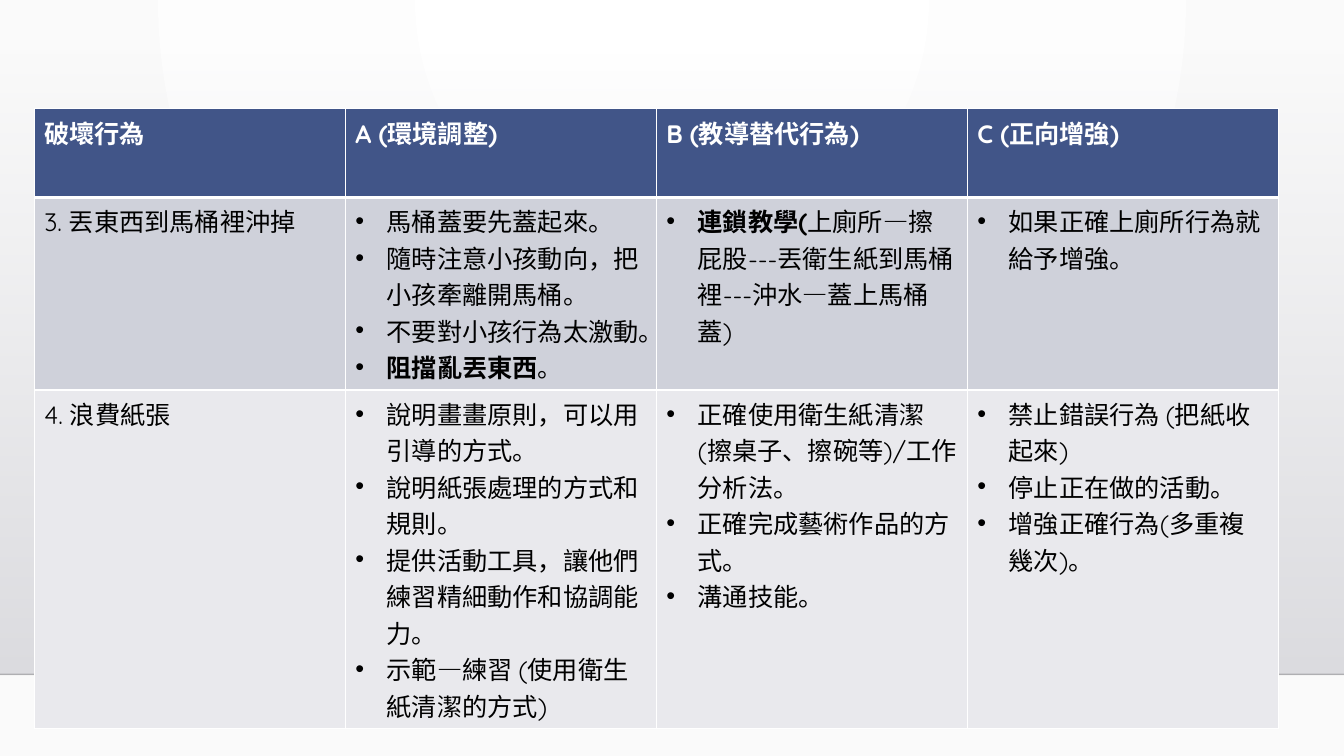
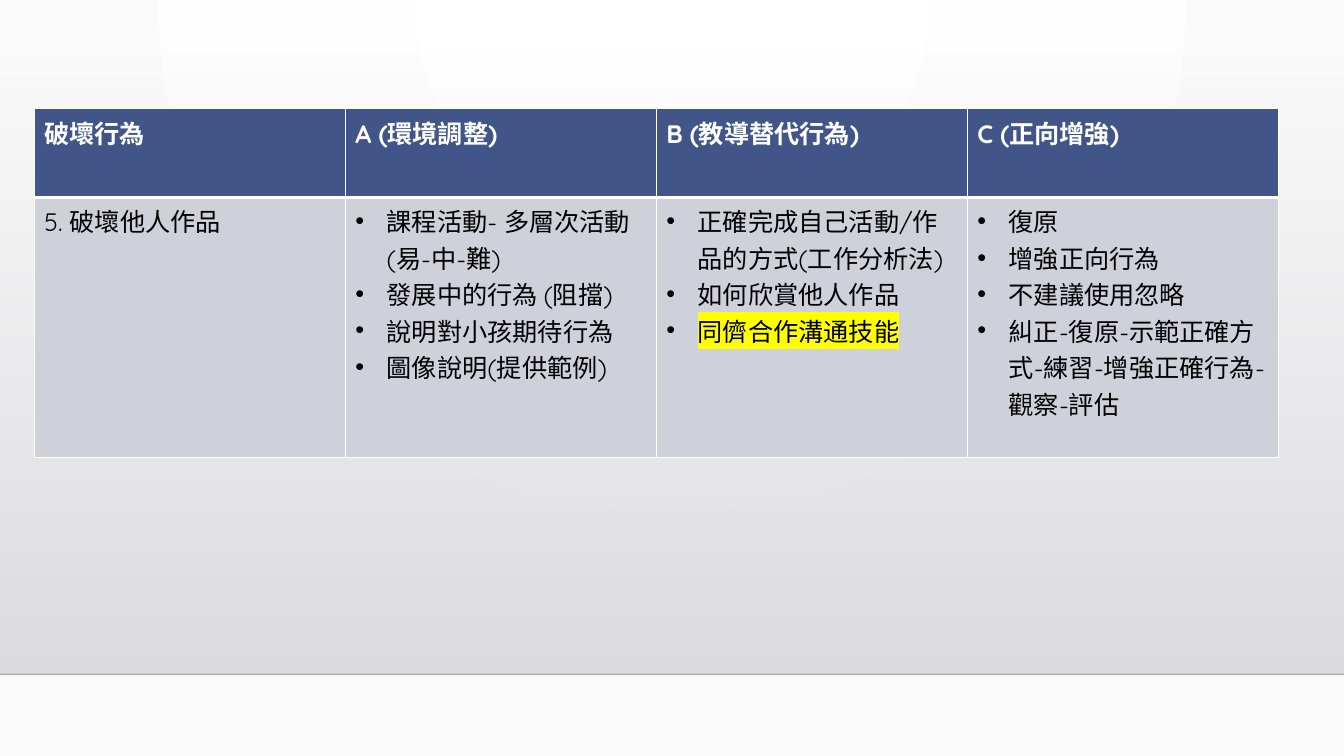
from dataclasses import dataclass

from lxml import etree
from pptx import Presentation
from pptx.dml.color import RGBColor
from pptx.enum.shapes import MSO_CONNECTOR, MSO_SHAPE
from pptx.oxml import parse_xml
from pptx.oxml.ns import nsdecls, qn
from pptx.util import Inches, Pt

STRAIGHT = MSO_CONNECTOR.STRAIGHT
RECTANGLE = MSO_SHAPE.RECTANGLE


@dataclass(frozen=True)
class Theme:
    font: str = "Quicksand"
    size: int = 18
    white: str = "FFFFFF"
    page_edge: str = "FAFAFA"
    band_top: str = "DCDCE0"
    band_bottom: str = "DEDEE2"
    floor_line: str = "000001"
    header_fill: str = "415588"
    row_fills: tuple = ("CFD1DA", "E9E9ED")
    text: str = "000000"
    highlight: str = "FFFF00"
    thin: int = 1
    thick: int = 3


THEME = Theme()
BLANK_LAYOUT = 6
SLIDE_WIDTH, SLIDE_HEIGHT = 13.33, 7.5
BAND_TOP, BAND_BOTTOM = 0.51, 6.69
TABLE_LEFT, TABLE_TOP, TABLE_WIDTH = 0.34, 1.08, 12.34
HEADER_HEIGHT = 0.88
BULLET_INDENT = 0.31

HEADERS = ["破壞行為", "A (環境調整)", "B (教導替代行為)", "C (正向增強)"]

# A row is its height, its behaviour, and a bullet list for each other column.
# A bullet is a string, or a list of (text, style) runs.
SLIDES = [
    [
        (1.91, "3. 丟東西到馬桶裡沖掉",
         ["馬桶蓋要先蓋起來。",
          "隨時注意小孩動向，把小孩牽離開馬桶。",
          "不要對小孩行為太激動。",
          [("阻擋亂丟東西", "bold"), ("。", "plain")]],
         [[("連鎖教學(", "bold"),
           ("上廁所—擦屁股---丟衛生紙到馬桶裡---沖水—蓋上馬桶蓋)", "plain")]],
         ["如果正確上廁所行為就給予增強。"]),
        (3.35, "4. 浪費紙張",
         ["說明畫畫原則，可以用引導的方式。",
          "說明紙張處理的方式和規則。",
          "提供活動工具，讓他們練習精細動作和協調能力。",
          "示範—練習 (使用衛生紙清潔的方式)"],
         ["正確使用衛生紙清潔(擦桌子、擦碗等)/工作分析法。",
          "正確完成藝術作品的方式。",
          "溝通技能。"],
         ["禁止錯誤行為 (把紙收起來)",
          "停止正在做的活動。",
          "增強正確行為(多重複幾次)。"]),
    ],
    [
        (2.58, "5. 破壞他人作品",
         ["課程活動- 多層次活動(易-中-難)",
          "發展中的行為 (阻擋)",
          "說明對小孩期待行為",
          "圖像說明(提供範例)"],
         ["正確完成自己活動/作品的方式(工作分析法)",
          "如何欣賞他人作品",
          [("同儕合作溝通技能", "highlight")]],
         ["復原",
          "增強正向行為",
          "不建議使用忽略",
          "糾正-復原-示範正確方式-練習-增強正確行為-觀察-評估"]),
    ],
]


def color(value):
    return RGBColor.from_string(value)


def set_gradient(fill, colors):
    fill.gradient()
    for stop, value in zip(fill.gradient_stops, colors):
        stop.color.rgb = color(value)


def set_opacity(color_element, percent):
    etree.SubElement(color_element, qn("a:alpha"), val=str(percent * 1000))


def set_page_background(master):
    """Give every slide a radial gradient centred on the top edge."""
    set_gradient(master.background.fill, (THEME.white, THEME.page_edge))
    gradient = master.element.find(".//" + qn("a:gradFill"))
    gradient.replace(gradient.find(qn("a:lin")), parse_xml(
        f'<a:path {nsdecls("a")} path="circle">'
        '<a:fillToRect l="43000" t="0" r="43000" b="100000"/></a:path>'))


def add_floor(slide):
    """Draw the band that fades in downwards, and the line below it."""
    band = slide.shapes.add_shape(
        RECTANGLE, 0, Inches(BAND_TOP),
        Inches(SLIDE_WIDTH), Inches(BAND_BOTTOM - BAND_TOP))
    band.shadow.inherit = False
    band.line.fill.background()
    set_gradient(band.fill, (THEME.band_top, THEME.band_bottom))
    band.fill.gradient_angle = 270
    set_opacity(band.element.spPr.find(".//" + qn("a:srgbClr")), 0)

    line = slide.shapes.add_connector(
        STRAIGHT, 0, Inches(BAND_BOTTOM),
        Inches(SLIDE_WIDTH), Inches(BAND_BOTTOM))
    line.line.width = Pt(1)
    line.line.color.rgb = color(THEME.floor_line)
    properties = line.element.spPr
    set_opacity(properties.find(".//" + qn("a:srgbClr")), 20)
    etree.SubElement(properties, qn("a:effectLst"))


def set_borders(cell, top, bottom):
    properties = cell._tc.get_or_add_tcPr()
    widths = {"L": THEME.thin, "R": THEME.thin, "T": top, "B": bottom}
    for side, width in widths.items():
        properties.append(parse_xml(
            f'<a:ln{side} {nsdecls("a")} w="{Pt(width)}"><a:solidFill>'
            f'<a:srgbClr val="{THEME.white}"/></a:solidFill></a:ln{side}>'))


def add_bullet(paragraph):
    properties = paragraph._p.get_or_add_pPr()
    indent = Inches(BULLET_INDENT)
    properties.set("marL", str(indent))
    properties.set("indent", str(-indent))
    etree.SubElement(properties, qn("a:buFont"), typeface="Arial")
    etree.SubElement(properties, qn("a:buChar"), char="•")


def add_run(paragraph, text, style, text_color):
    run = paragraph.add_run()
    run.text = text
    formats = {"name": THEME.font, "size": Pt(THEME.size),
               "bold": style == "bold"}
    for name, value in formats.items():
        setattr(run.font, name, value)
    run.font.color.rgb = color(text_color)
    if style == "highlight":
        fill = run._r.get_or_add_rPr().find(qn("a:solidFill"))
        fill.addnext(parse_xml(
            f'<a:highlight {nsdecls("a")}>'
            f'<a:srgbClr val="{THEME.highlight}"/></a:highlight>'))


def fill_cell(cell, content, fill, text_color, style="plain"):
    """Write a string as plain text, or a list as bullets."""
    cell.fill.solid()
    cell.fill.fore_color.rgb = color(fill)
    bulleted = isinstance(content, list)
    frame = cell.text_frame
    for index, item in enumerate(content if bulleted else [content]):
        paragraph = frame.add_paragraph() if index else frame.paragraphs[0]
        if bulleted:
            add_bullet(paragraph)
        runs = [(item, style)] if isinstance(item, str) else item
        for text, run_style in runs:
            add_run(paragraph, text, run_style, text_color)


def add_behaviour_table(slide, behaviours):
    heights = [HEADER_HEIGHT] + [height for height, *_ in behaviours]
    table = slide.shapes.add_table(
        len(heights), len(HEADERS), Inches(TABLE_LEFT), Inches(TABLE_TOP),
        Inches(TABLE_WIDTH), Inches(sum(heights))).table
    for row, height in zip(table.rows, heights):
        row.height = Inches(height)

    for column, header in enumerate(HEADERS):
        cell = table.cell(0, column)
        set_borders(cell, THEME.thin, THEME.thick)
        fill_cell(cell, header, THEME.header_fill, THEME.white, "bold")

    for row, (_, *contents) in enumerate(behaviours, start=1):
        fill = THEME.row_fills[(row - 1) % len(THEME.row_fills)]
        top = THEME.thick if row == 1 else THEME.thin
        for column, content in enumerate(contents):
            cell = table.cell(row, column)
            set_borders(cell, top, THEME.thin)
            fill_cell(cell, content, fill, THEME.text)


def main():
    presentation = Presentation()
    presentation.slide_width = Inches(SLIDE_WIDTH)
    presentation.slide_height = Inches(SLIDE_HEIGHT)
    set_page_background(presentation.slide_master)
    for behaviours in SLIDES:
        slide = presentation.slides.add_slide(
            presentation.slide_layouts[BLANK_LAYOUT])
        add_floor(slide)
        add_behaviour_table(slide, behaviours)
    presentation.save("out.pptx")


if __name__ == "__main__":
    main()
